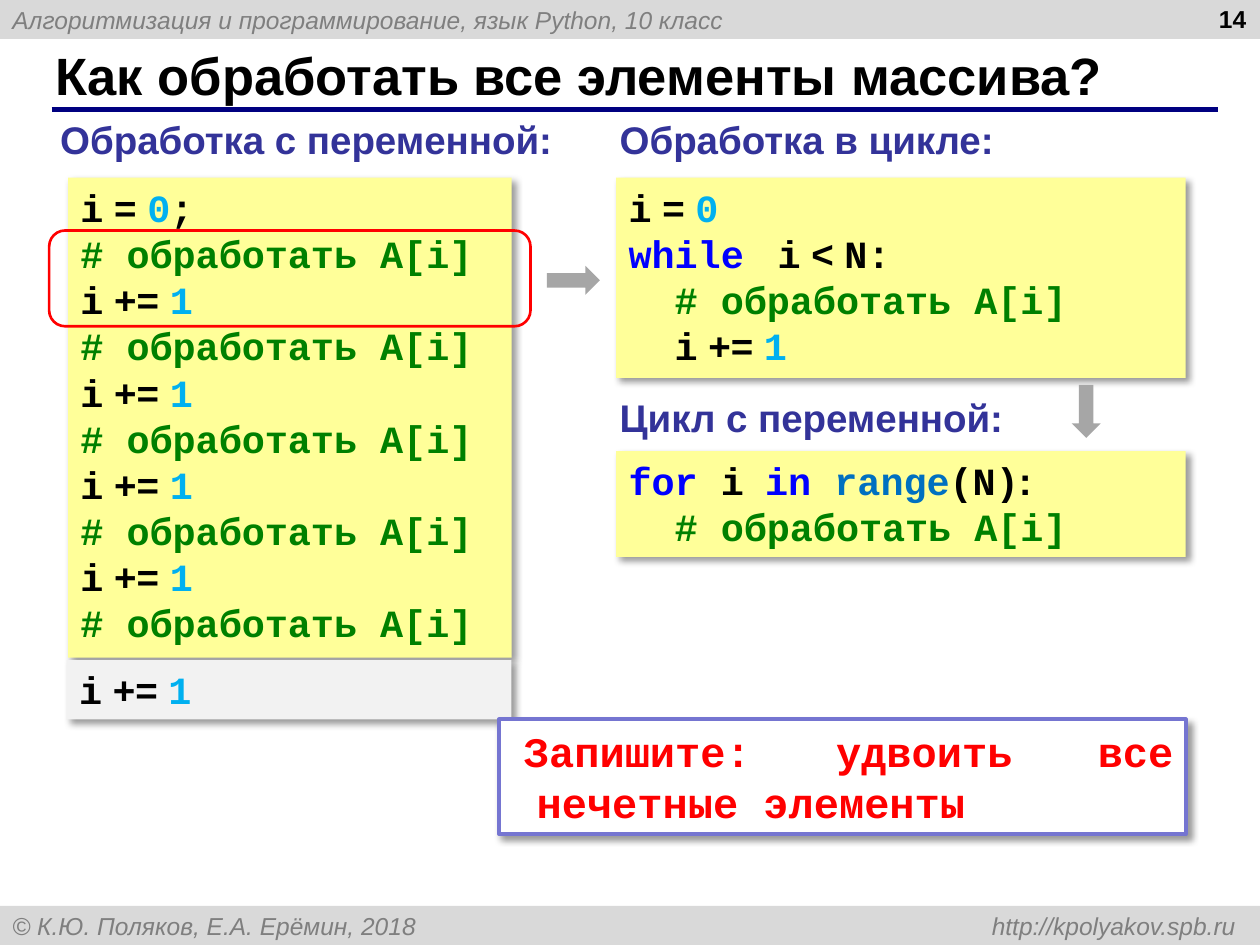
import pptx
import pptx.dml.color
import pptx.enum.shapes
import pptx.enum.text
import pptx.oxml
import pptx.oxml.ns
import pptx.util
import lxml.etree

Inches = pptx.util.Inches
Pt = pptx.util.Pt
kinds = pptx.enum.shapes.MSO_SHAPE
align = pptx.enum.text.PP_ALIGN
middle = pptx.enum.text.MSO_ANCHOR.MIDDLE
rgb = pptx.dml.color.RGBColor.from_string
qn = pptx.oxml.ns.qn

deck = pptx.Presentation()
deck.slide_width, deck.slide_height = Inches(10), Inches(7.5)
slide = deck.slides.add_slide(deck.slide_layouts[6])
shapes = slide.shapes


def add_box(place, fill=None, line=None, width=1, kind=kinds.RECTANGLE, shadow=False):
    box = shapes.add_shape(kind, *map(Inches, place))
    box.shadow.inherit = False
    if fill:
        box.fill.solid()
        box.fill.fore_color.rgb = rgb(fill)
    else:
        box.fill.background()
    if line:
        box.line.color.rgb = rgb(line)
        box.line.width = Pt(width)
    else:
        box.line.fill.background()
    if shadow:
        effects = box._element.spPr.find(qn("a:effectLst"))
        outer = lxml.etree.SubElement(effects, qn("a:outerShdw"), blurRad=str(Pt(4)),
                                      dist=str(Pt(3)), dir="2700000", algn="tl", rotWithShape="0")
        tone = lxml.etree.SubElement(outer, qn("a:srgbClr"), val="000000")
        lxml.etree.SubElement(tone, qn("a:alpha"), val="40000")
    return box


def write(box, lines, size, bold=True, italic=False):
    # Each line is a list of (text, colour, font)
    frame = box.text_frame
    frame.word_wrap = True
    for row, line in enumerate(lines):
        para = frame.paragraphs[0] if row == 0 else frame.add_paragraph()
        para.alignment = align.LEFT
        for text, color, face in line:
            run = para.add_run()
            run.text = text
            run.font.size, run.font.name = Pt(size), face
            run.font.bold, run.font.italic = bold, italic
            run.font.color.rgb = rgb(color)
    return frame


sans, mono = "Arial", "Courier New"
black, gray, navy, red = "000000", "7F7F7F", "333399", "FF0000"
blue, cyan, green = "0000FF", "00B0F0", "008000"
yellow = "FFFF99"

# Top and bottom bars
bars = [(0, "Алгоритмизация и программирование, язык Python, 10 класс"),
        (7.19, "© К.Ю. Поляков, Е.А. Ерёмин, 2018 \thttp://kpolyakov.spb.ru")]
for top, text in bars:
    bar = add_box((0, top, 10, 0.31), "D9D9D9")
    frame = write(bar, [[(text, gray, sans)]], 14, False, True)
    frame.vertical_anchor = middle
    if "\t" in text:
        tabs = lxml.etree.SubElement(frame.paragraphs[0]._p.get_or_add_pPr(), qn("a:tabLst"))
        lxml.etree.SubElement(tabs, qn("a:tab"), pos=str(Inches(9.71)), algn="r")

# Title, rule below it and page number
rule = shapes.add_connector(pptx.enum.shapes.MSO_CONNECTOR.STRAIGHT,
                            Inches(0.41), Inches(0.87), Inches(9.67), Inches(0.87))
rule.line.color.rgb = rgb("000080")
rule.line.width = Pt(3)
lxml.etree.SubElement(rule._element.spPr, qn("a:effectLst"))

title = shapes.add_textbox(*map(Inches, (0.34, 0.33, 9.16, 0.52)))
frame = write(title, [[("Как обработать все элементы массива?", black, sans)]], 30)
frame.vertical_anchor = middle
number = shapes.add_textbox(*map(Inches, (7.66, -0.02, 2.33, 0.52)))
write(number, [[("14", black, sans)]], 14).paragraphs[0].alignment = align.RIGHT

# Headings
heads = [(0.38, 0.87, "Обработка с переменной:"),
         (4.82, 0.87, "Обработка в цикле:"),
         (4.82, 3.08, "Цикл с переменной:")]
for left, top, text in heads:
    head = shapes.add_textbox(*map(Inches, (left, top, 4.17, 0.47)))
    write(head, [[(text, navy, sans)]], 22)

# Code blocks
note = [("# обработать A[i]", green, mono)]
inner = [("  # обработать A[i]", green, mono)]
start = [("i", black, mono), (" = ", black, sans), ("0", cyan, mono)]
step = [("i", black, mono), (" += ", black, sans), ("1", cyan, mono)]
head = [("while ", blue, mono), (" ", black, sans), ("i", black, mono),
        (" < ", black, sans), ("N:", black, mono)]
loop = [("for ", blue, mono), ("i", black, mono), ("  ", black, sans), ("in ", blue, mono),
        ("range", "0070C0", mono), ("(N)", black, mono), (":", black, sans)]
blocks = [
    ((0.54, 1.41, 3.52, 3.81), yellow,
     [start + [(";", black, mono)]] + [note, step] * 4 + [note]),
    ((0.53, 5.24, 3.53, 0.47), "F2F2F2", [step]),
    ((4.89, 1.41, 4.52, 1.59), yellow,
     [start, head, inner, [("  ", black, mono)] + step]),
    ((4.89, 3.58, 4.52, 0.84), yellow, [loop, inner]),
]
for place, fill, lines in blocks:
    block = add_box(place, fill, shadow=True)
    write(block, lines, 22).vertical_anchor = pptx.enum.text.MSO_ANCHOR.TOP

# Frame around the repeated step
add_box((0.39, 1.83, 3.82, 0.76), line=red, width=1.5, kind=kinds.ROUNDED_RECTANGLE)

# Arrows between the blocks
for left, top, turn in [(4.34, 2.11, 0), (8.41, 3.15, 90)]:
    arrow = add_box((left, top, 0.42, 0.23), "A6A6A6", kind=kinds.RIGHT_ARROW)
    arrow.rotation = turn

# Task
task = add_box((3.96, 5.71, 5.45, 0.91), "FFFFFF", "7575D1", 2.25, shadow=True)
frame = write(task, [[("Запишите: удвоить все нечетные элементы", red, mono)]], 24)
frame.vertical_anchor = pptx.enum.text.MSO_ANCHOR.TOP
para = frame.paragraphs[0]
para.alignment = align.JUSTIFY
props = para._p.get_or_add_pPr()
props.set("marL", str(Inches(0.2)))
props.set("indent", str(Inches(-0.1)))

deck.save("out.pptx")
